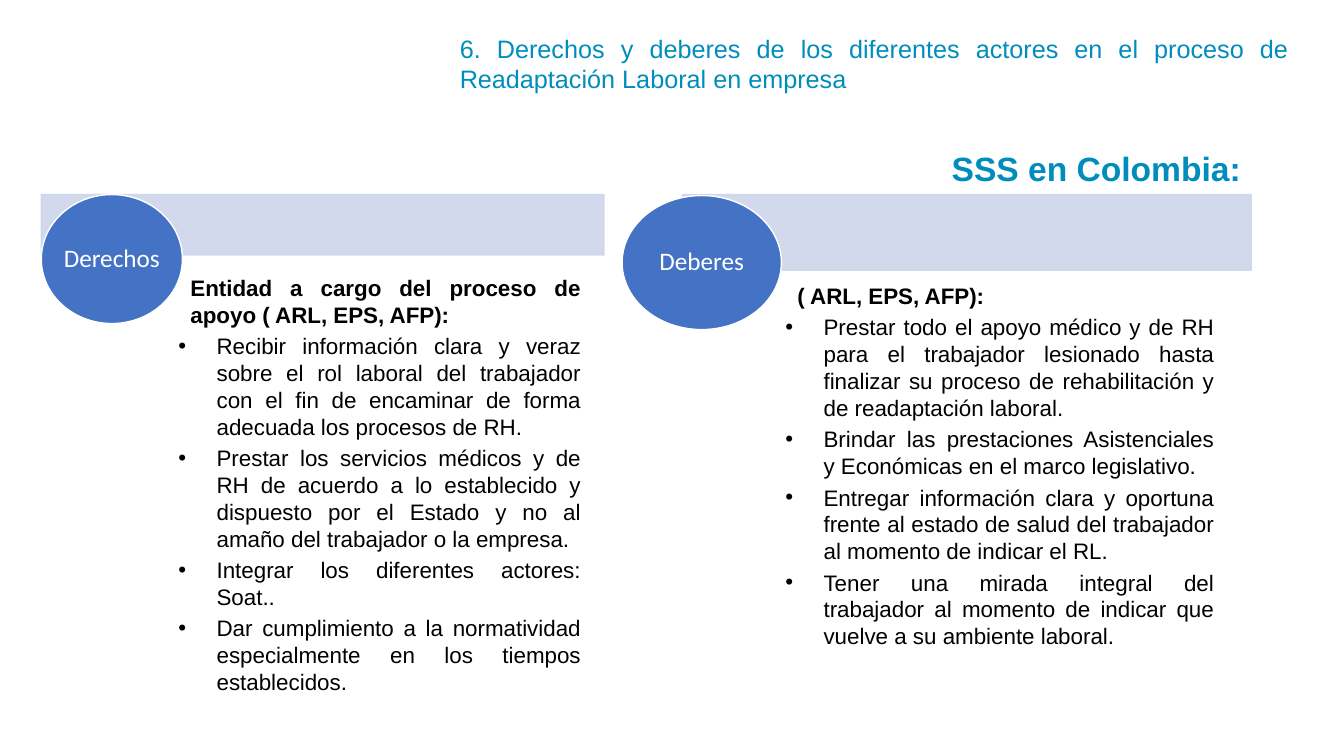
from lxml import etree
from pptx import Presentation
from pptx.dml.color import RGBColor
from pptx.enum.shapes import MSO_SHAPE
from pptx.enum.text import MSO_ANCHOR, PP_ALIGN
from pptx.oxml.ns import qn
from pptx.util import Inches, Pt

HEADING_BLUE, BAND_BLUE, CIRCLE_BLUE = "008DBD", "CFD5EA", "4472C4"
WHITE, BLACK = "FFFFFF", "000000"


def add_text(paragraph, text, size, color, font="Arial", bold=False):
    run = paragraph.add_run()
    run.text = text
    run.font.name, run.font.size, run.font.bold = font, Pt(size), bold
    run.font.color.rgb = RGBColor.from_string(color)


def add_figure(kind, place, fill, line, alpha=None):
    shape = slide.shapes.add_shape(kind, *map(Inches, place))
    shape.shadow.inherit = False
    shape.fill.solid()
    shape.fill.fore_color.rgb = RGBColor.from_string(fill)
    shape.line.color.rgb = RGBColor.from_string(line)
    shape.line.width = Pt(1)
    if alpha:
        for color in shape._element.spPr.iter(qn("a:srgbClr")):
            etree.SubElement(color, qn("a:alpha")).set("val", str(alpha * 1000))
    return shape


presentation = Presentation()
presentation.slide_width, presentation.slide_height = Inches(13.33), Inches(7.5)
slide = presentation.slides.add_slide(presentation.slide_layouts[5])

# Title
title = slide.shapes.title
title.left, title.top, title.width, title.height = map(Inches, (4.46, 0.28, 8.42, 0.71))
title.text_frame.vertical_anchor = MSO_ANCHOR.TOP
paragraph = title.text_frame.paragraphs[0]
paragraph.alignment = PP_ALIGN.JUSTIFY
add_text(paragraph, "6. Derechos y deberes de los diferentes actores en el proceso de "
         "Readaptación Laboral en empresa", 18, HEADING_BLUE)

# Subtitle
subtitle = slide.shapes.add_textbox(*map(Inches, (9.34, 1.42, 3.14, 0.5)))
subtitle.text_frame.word_wrap = True
add_text(subtitle.text_frame.paragraphs[0], "SSS en Colombia:", 24, HEADING_BLUE, bold=True)

# Columns: label, band, circle, text box, heading, bullets
columns = [
    ("Derechos", (0.41, 1.93, 5.58, 0.6), (0.41, 1.93, 1.4, 1.28), (1.67, 2.67, 4.19, 4.24),
     "Entidad a cargo del proceso de apoyo ( ARL, EPS, AFP):",
     ["Recibir información clara y veraz sobre el rol laboral del trabajador con el fin de "
      "encaminar de forma adecuada los procesos de RH.",
      "Prestar los servicios médicos y de RH de acuerdo a lo establecido y dispuesto por el "
      "Estado y no al amaño del trabajador o la empresa.",
      "Integrar los diferentes actores: Soat..",
      "Dar cumplimiento a la normatividad especialmente en los tiempos establecidos."]),
    ("Deberes", (6.77, 1.93, 5.64, 0.75), (6.17, 1.94, 1.58, 1.33), (7.69, 2.75, 4.45, 4.24),
     "( ARL, EPS, AFP):",
     ["Prestar todo el apoyo médico y de RH para el trabajador lesionado hasta finalizar su "
      "proceso de rehabilitación y de readaptación laboral.",
      "Brindar las prestaciones Asistenciales y Económicas en el marco legislativo.",
      "Entregar información clara y oportuna frente al estado de salud del trabajador al "
      "momento de indicar el RL.",
      "Tener una mirada integral del trabajador al momento de indicar que vuelve a su "
      "ambiente laboral."]),
]

for label, band_place, circle_place, text_place, heading, bullets in columns:
    # Band and labelled circle
    add_figure(MSO_SHAPE.RECTANGLE, band_place, BAND_BLUE, BAND_BLUE, alpha=90)
    frame = add_figure(MSO_SHAPE.OVAL, circle_place, CIRCLE_BLUE, WHITE).text_frame
    frame.margin_left = frame.margin_right = frame.margin_top = frame.margin_bottom = 0
    frame.vertical_anchor = MSO_ANCHOR.MIDDLE
    paragraph = frame.paragraphs[0]
    paragraph.alignment = PP_ALIGN.CENTER
    paragraph.line_spacing = 0.9
    add_text(paragraph, label, 18, WHITE, font="Calibri")

    # Heading and bullets
    frame = slide.shapes.add_textbox(*map(Inches, text_place)).text_frame
    frame.word_wrap = True
    for index, text in enumerate([heading] + bullets):
        is_heading = index == 0
        paragraph = frame.paragraphs[0] if is_heading else frame.add_paragraph()
        paragraph.alignment = PP_ALIGN.JUSTIFY
        paragraph.space_before = Pt(3.2)
        properties = paragraph._p.get_or_add_pPr()
        properties.set("marL", str(Inches(0.12 if is_heading else 0.38)))
        properties.set("indent", str(Inches(0 if is_heading else -0.38)))
        if not is_heading:
            etree.SubElement(properties, qn("a:buFont")).set("typeface", "Arial")
            etree.SubElement(properties, qn("a:buChar")).set("char", "•")
        add_text(paragraph, text, 16, BLACK, bold=is_heading)

presentation.save("out.pptx")
